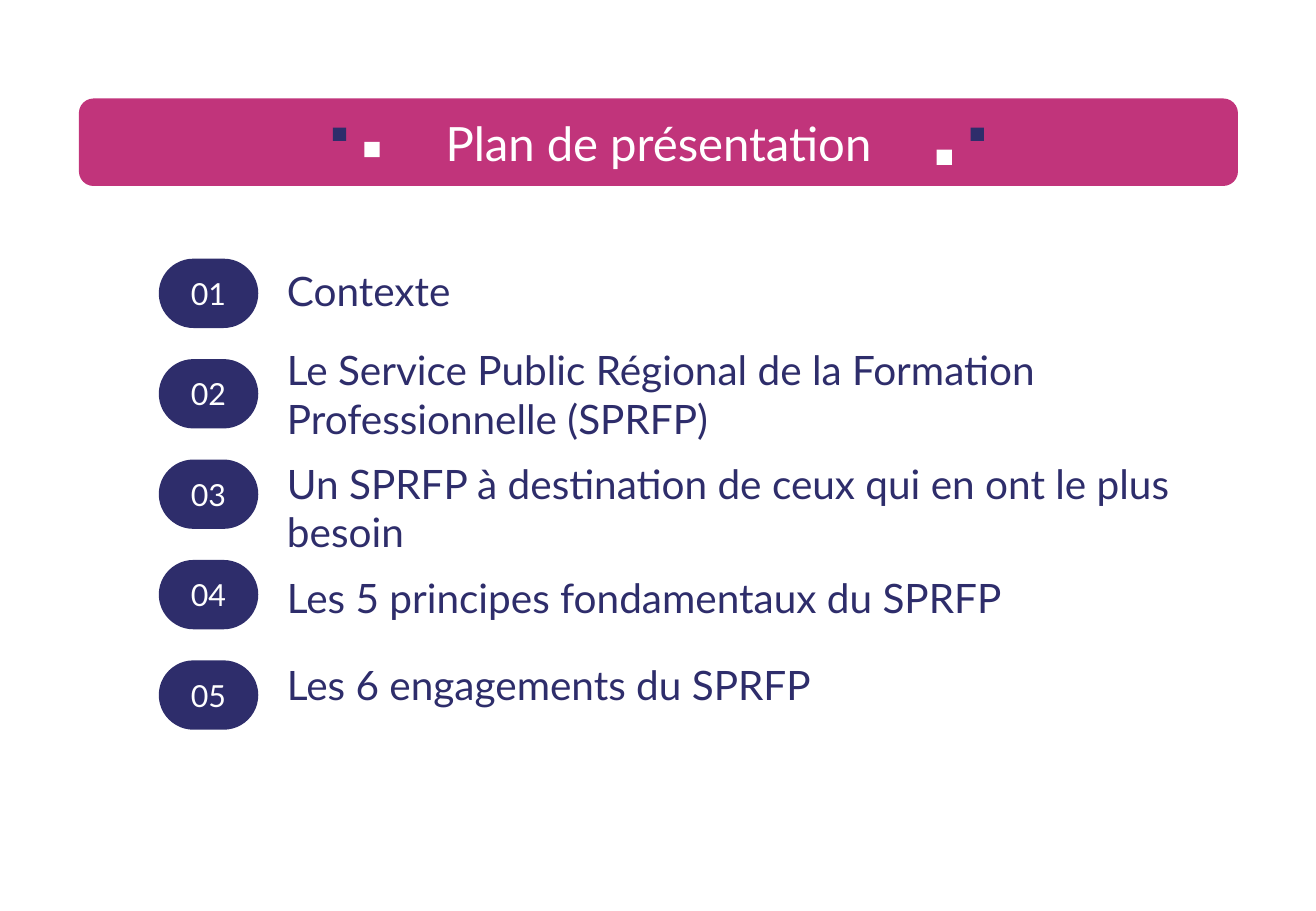
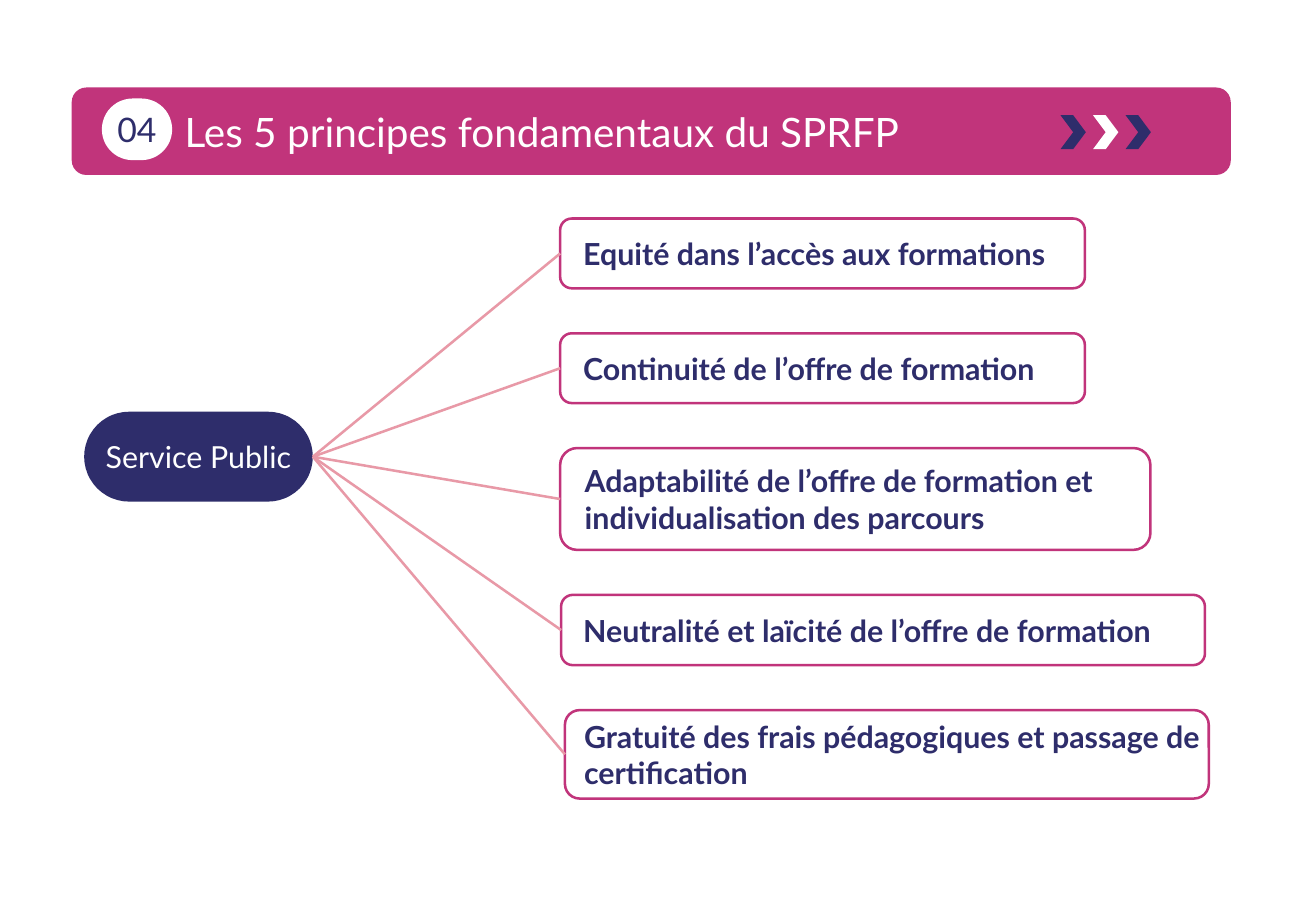
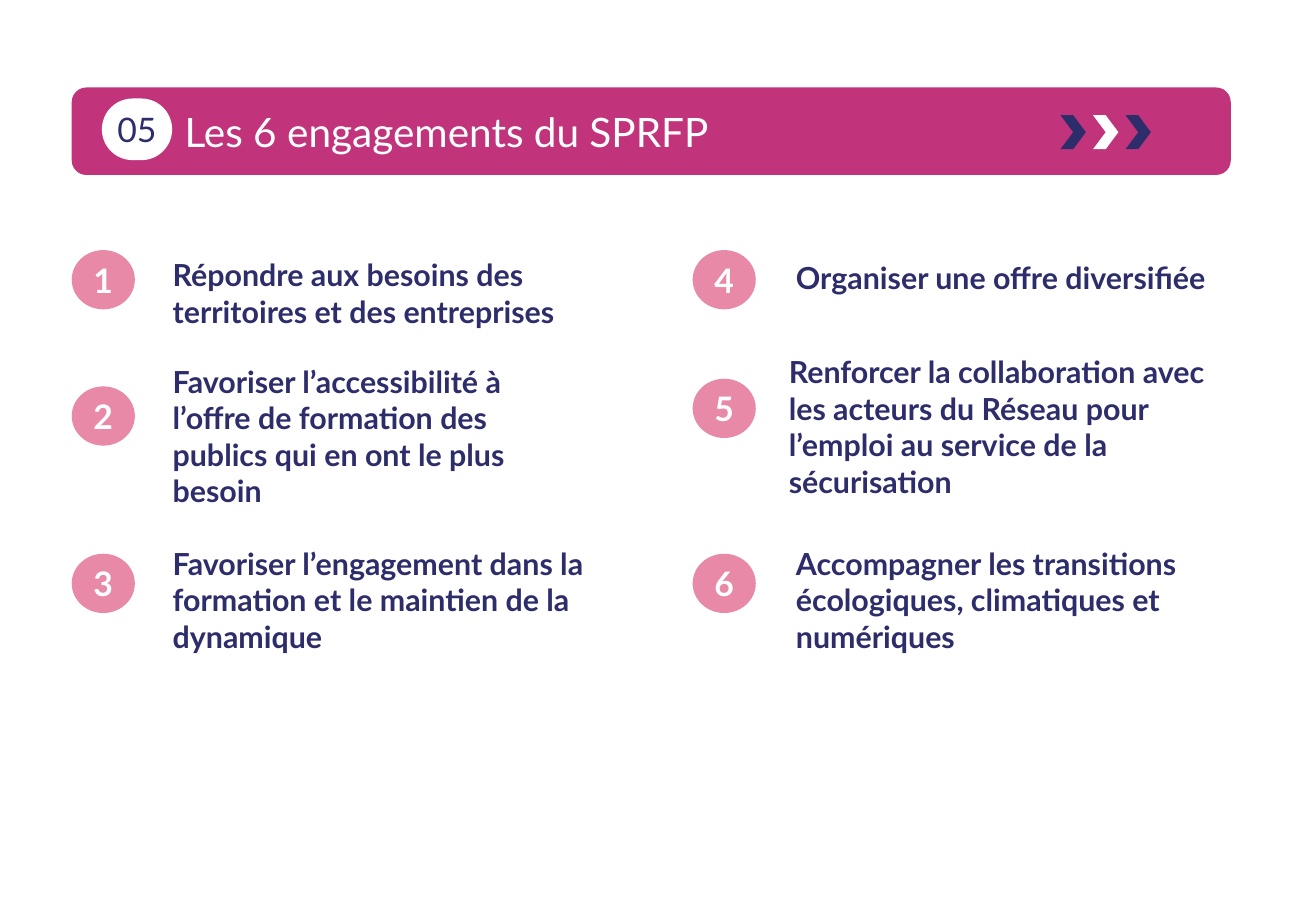
import pptx
import pptx.dml.color
import pptx.enum.shapes
import pptx.enum.text
import pptx.oxml.ns
import pptx.util
from lxml import etree

Cm = pptx.util.Cm
Shape = pptx.enum.shapes.MSO_SHAPE
Align = pptx.enum.text.PP_ALIGN
Anchor = pptx.enum.text.MSO_ANCHOR

# Shared style
FONT = "Lato"
NAVY, PINK, ROSE, BLUSH, WHITE = "2E2D6B", "C1347B", "E889A7", "E899A7", "FFFFFF"
PLAN_BAND = (1.65, 2.06, 24.23, 1.83)
HEAD_BAND = (1.5, 1.83, 24.23, 1.83)


def paint(target, color):
    """Give a fill, line or font a solid hex colour."""
    if hasattr(target, "solid"):
        target.solid()
        target.fore_color.rgb = pptx.dml.color.RGBColor.from_string(color)
    else:
        target.color.rgb = pptx.dml.color.RGBColor.from_string(color)


def write(shape, text, size=18, color=NAVY, bold=False, align=Align.LEFT,
          anchor=Anchor.MIDDLE, wrap=True, left=0):
    frame = shape.text_frame
    frame.auto_size = pptx.enum.text.MSO_AUTO_SIZE.NONE
    frame.word_wrap = wrap
    frame.vertical_anchor = anchor
    frame.margin_left = Cm(left)
    frame.margin_right = frame.margin_top = frame.margin_bottom = 0
    para = frame.paragraphs[0]
    para.alignment = align
    run = para.add_run()
    run.text = text
    run.font.name = FONT
    run.font.size = pptx.util.Pt(size)
    run.font.bold = bold
    paint(run.font, color)


def draw(slide, kind, box, fill, line=None, round=None):
    shape = slide.shapes.add_shape(kind, *map(Cm, box))
    shape.shadow.inherit = False
    paint(shape.fill, fill)
    if line:
        paint(shape.line, line)
        shape.line.width = pptx.util.Pt(1.5)
    else:
        shape.line.fill.background()
    if round is not None:
        shape.adjustments[0] = round
    return shape


def label(slide, box, text, **style):
    write(slide.shapes.add_textbox(*map(Cm, box)), text, **style)


def pill(slide, box, text, fill=NAVY, **style):
    shape = draw(slide, Shape.ROUNDED_RECTANGLE, box, fill, round=0.5)
    write(shape, text, align=Align.CENTER, wrap=False, **style)
    return shape


def title(slide, box, text, **style):
    """Set the title above the shapes drawn so far."""
    holder = slide.shapes.title
    holder.left, holder.top, holder.width, holder.height = map(Cm, box)
    write(holder, text, color=WHITE, **style)
    slide.shapes._spTree.append(holder._element)


def link(slide, start, end):
    wire = slide.shapes.add_connector(
        pptx.enum.shapes.MSO_CONNECTOR.STRAIGHT, 0, 0, 0, 0)
    wire.begin_connect(start, 3)
    wire.end_connect(end, 1)
    paint(wire.line, BLUSH)
    wire.line.width = pptx.util.Pt(1.5)
    etree.SubElement(wire._element.spPr, pptx.oxml.ns.qn("a:effectLst"))


def banner(slide, box, text):
    """Centred title between small squares."""
    left, top = box[:2]
    draw(slide, Shape.ROUNDED_RECTANGLE, box, PINK)
    title(slide, box, text, size=28, align=Align.CENTER)
    for x, y, side, color in ((5.31, 0.61, 0.28, NAVY), (5.97, 0.91, 0.32, WHITE),
                              (17.93, 1.07, 0.32, WHITE), (18.64, 0.61, 0.28, NAVY)):
        draw(slide, Shape.RECTANGLE, (left + x, top + y, side, side), color)


def header(slide, box, number, text):
    """Section title with a number badge and three chevrons."""
    left, top, width, height = box
    draw(slide, Shape.ROUNDED_RECTANGLE, box, PINK)
    pill(slide, (left + 0.63, top + 0.23, 1.47, 1.29), number, fill=WHITE, size=20)
    title(slide, (left + 2.36, top, 18, height), text, size=24)
    for i, color in enumerate((NAVY, WHITE, NAVY)):
        draw(slide, Shape.CHEVRON, (left + 20.67 + i * 0.68, top + 0.58, 0.53, 0.71), color)


def agenda(slide, box, rows):
    """Numbered list; each row has its text and a vertical shift."""
    left, top, width, pitch = box
    high = 1.45
    for i, (text, shift) in enumerate(rows):
        y = top + i * pitch
        pill(slide, (left, y, 2.08, high), f"{i + 1:02}", color=WHITE)
        label(slide, (left + 2.68, y + shift - 0.3, width - 2.68, high + 0.6), text, size=24)


def tree(slide, box, root, leaves):
    """Root pill on the left, linked to a column of framed leaves."""
    left, top, gap, edge = box
    base = pill(slide, (left, 8.61, 4.78, 1.88), root, color=WHITE)
    for x, width, height, text in leaves:
        leaf = draw(slide, Shape.ROUNDED_RECTANGLE, (x, top, width, height), WHITE, line=PINK)
        write(leaf, text, bold=True, left=edge - x)
        link(slide, base, leaf)
        top += height + gap


def pledge(slide, spot, number, text, area):
    """Numbered disc with its text, whose area is relative to the disc."""
    x, y = spot
    disc = draw(slide, Shape.OVAL, (x, y, 1.32, 1.24), ROSE)
    write(disc, number, size=20, color=WHITE, bold=True, align=Align.CENTER, wrap=False)
    right, down, width = area
    label(slide, (x + right, y + down, width, 3), text, bold=True, anchor=Anchor.TOP)


def main():
    deck = pptx.Presentation()
    deck.slide_width, deck.slide_height = Cm(27.51), Cm(19.05)
    plan, rules, goals = (deck.slides.add_slide(deck.slide_layouts[5]) for _ in range(3))

    # Agenda
    banner(plan, PLAN_BAND, "Plan de présentation")
    agenda(plan, (3.32, 5.41, 22.88, 2.1), (
        ("Contexte", -0.06),
        ("Le Service Public Régional de la Formation Professionnelle (SPRFP)", 0),
        ("Un SPRFP à destination de ceux qui en ont le plus besoin", 0.27),
        ("Les 5 principes fondamentaux du SPRFP", 0.06),
        ("Les 6 engagements du SPRFP", -0.22),
    ))

    # Principles
    header(rules, HEAD_BAND, "04", "Les 5 principes fondamentaux du SPRFP")
    tree(rules, (1.76, 4.57, 0.94, 12.12), "Service Public", (
        (11.71, 10.97, 1.46, "Equité dans l’accès aux formations"),
        (11.71, 10.97, 1.46, "Continuité de l’offre de formation"),
        (11.71, 12.34, 2.13,
         "Adaptabilité de l’offre de formation et individualisation des parcours"),
        (11.73, 13.46, 1.47, "Neutralité et laïcité de l’offre de formation"),
        (11.81, 13.46, 1.85, "Gratuité des frais pédagogiques et passage de certification"),
    ))

    # Commitments
    header(goals, HEAD_BAND, "05", "Les 6 engagements du SPRFP")
    items = (
        (1.5, 5.23, "Répondre aux besoins des territoires et des entreprises",
         (2.11, 0.13, 8.64)),
        (1.5, 8.08, "Favoriser l’accessibilité à l’offre de formation des publics "
         "qui en ont le plus besoin", (2.11, -0.49, 8.64)),
        (1.5, 11.58, "Favoriser l’engagement dans la formation et le maintien de la dynamique",
         (2.11, -0.18, 9.47)),
        (14.48, 5.23, "Organiser une offre diversifiée", (2.16, 0.18, 9.47)),
        (14.48, 7.92, "Renforcer la collaboration avec les acteurs du Réseau pour l’emploi "
         "au service de la sécurisation", (2.01, -0.53, 9.27)),
        (14.48, 11.58, "Accompagner les transitions écologiques, climatiques et numériques",
         (2.16, -0.18, 9.47)),
    )
    for i, (x, y, text, area) in enumerate(items, 1):
        pledge(goals, (x, y), str(i), text, area)

    deck.save("out.pptx")


if __name__ == "__main__":
    main()
